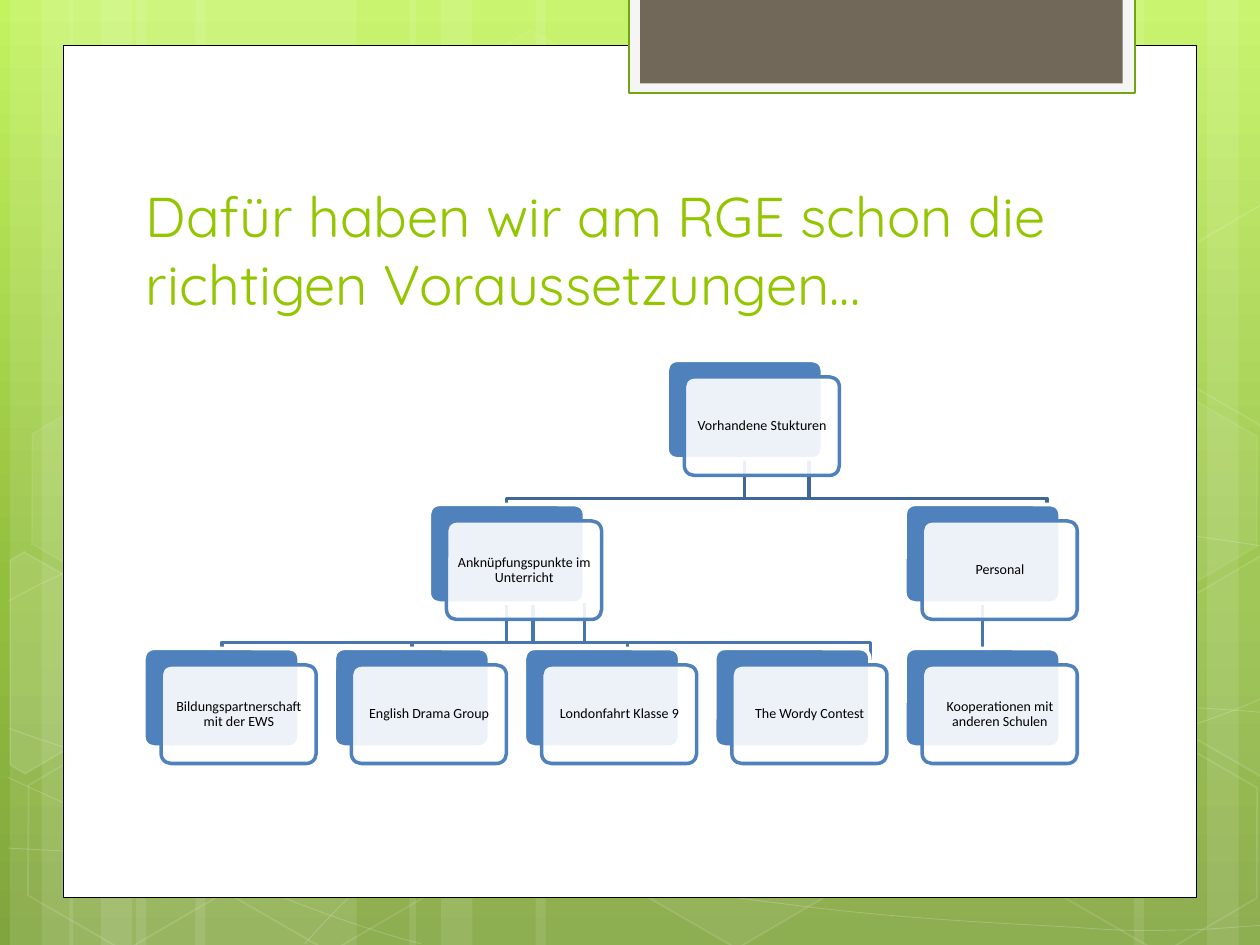
from copy import deepcopy
from typing import NamedTuple, Optional

from lxml import etree
from pptx import Presentation
from pptx.dml.color import RGBColor
from pptx.enum.shapes import MSO_CONNECTOR, MSO_SHAPE
from pptx.enum.text import MSO_ANCHOR, PP_ALIGN
from pptx.oxml.ns import qn
from pptx.util import Pt

RECTANGLE, ROUNDED, HEXAGON = MSO_SHAPE.RECTANGLE, MSO_SHAPE.ROUNDED_RECTANGLE, MSO_SHAPE.HEXAGON
STRAIGHT = MSO_CONNECTOR.STRAIGHT
BOTTOM, MIDDLE = MSO_ANCHOR.BOTTOM, MSO_ANCHOR.MIDDLE
LEFT, CENTER = PP_ALIGN.LEFT, PP_ALIGN.CENTER

WHITE = RGBColor(0xFF, 0xFF, 0xFF)
BLACK = RGBColor(0, 0, 0)
LIME = RGBColor(0x94, 0xC6, 0x00)
GREEN_EDGE = RGBColor(0x74, 0xA5, 0x10)
PALE_GREY = RGBColor(0xF5, 0xF5, 0xF5)
BROWN = RGBColor(0x71, 0x68, 0x5A)
BLUE = RGBColor(0x4F, 0x81, 0xBD)
ROOT_LINE = RGBColor(0x3F, 0x67, 0x97)
BRANCH_LINE = RGBColor(0x48, 0x75, 0xAC)
BACKGROUND = [(0, RGBColor(0xC3, 0xF3, 0x5F)), (0.62, RGBColor(0x93, 0xBF, 0x3F)),
              (1, RGBColor(0x81, 0xA5, 0x3E))]


class Paint(NamedTuple):
    color: RGBColor
    alpha: int = 100
    width: float = 0


class Hexagon(NamedTuple):
    left: float
    top: float
    fill_alpha: int
    line_alpha: int


class Node(NamedTuple):
    text: str
    column: float
    level: int


class Elbow(NamedTuple):
    start: float
    end: float
    level: int


# left, width of the full-height light bands
BANDS = [(77.8, 126), (5.8, 36), (23.8, 59.8), (111.6, 126), (39.6, 36), (57.6, 59.8),
         (527.8, 126), (689.8, 36), (648, 59.8), (306, 221.8), (234, 36), (252, 59.8)]
# start point, then three points for each Bézier segment
CURVES = [
    [(4.3, 484.6), (43.9, 486.7), (82.8, 488.9), (136.8, 488.2), (190.8, 487.4), (257.8, 486),
     (329.8, 478.8), (401.8, 471.6), (504, 457.9), (570.2, 444.2), (635.8, 430.6), (703.4, 409),
     (725, 396.7)],
    [(5, 343.4), (25.9, 331.9), (46.8, 321.1), (87.1, 310.3), (128.2, 299.5), (186.5, 283.7),
     (249.8, 278.6), (313.9, 273.6), (391.7, 272.9), (470.9, 278.6), (550.1, 284.4),
     (681.8, 306.7), (725, 312.5)],
    [(4.3, 444.2), (91.4, 483.8), (177.8, 523.4), (240.5, 539.3)],
    [(5, 416.2), (27.4, 424.1), (50.4, 432), (92.2, 443.5), (133.9, 454.3), (196.6, 472.3),
     (257, 484.6), (316.8, 496.8), (392.4, 509.8), (452.2, 517), (511.9, 524.9), (576, 527.8),
     (614.2, 529.9), (651.6, 532.8), (661.7, 531.4), (680.4, 531.4), (699.1, 530.6),
     (712.1, 529.2), (725, 528.5)],
    [(174.2, 539.3), (187.2, 524.9), (200.2, 510.5), (217.4, 497.5), (234.7, 484.6),
     (259.2, 469.4), (279.4, 460.1), (299.5, 450), (311.8, 445.7), (338.4, 438.5),
     (364.3, 431.3), (412.6, 421.2), (437.8, 416.2), (463.7, 411.1), (467.3, 411.1),
     (489.6, 409.7), (511.9, 407.5), (547.2, 405.4), (571.7, 404.6), (596.9, 403.9),
     (637.9, 404.6), (637.9, 404.6), (654, 404.6), (670, 404.6), (686.2, 404.6),
     (699.1, 405.4), (711.4, 406.1), (717.8, 406.8), (724.3, 407.5), (722.2, 406.8),
     (724.3, 407.5)],
]
HEXAGONS = [Hexagon(240.5, 25.9, 4, 8), Hexagon(357.8, 424.1, 6, 12), Hexagon(7.9, 425.5, 0, 12),
            Hexagon(10.1, 224.6, 7, 8), Hexagon(125.3, 426.2, 0, 12),
            Hexagon(542.2, 326.2, 10, 12), Hexagon(600.5, 427, 0, 12),
            Hexagon(600.5, 226.1, 7, 8)]
LEFT_PIECE = [(5.8, 320.4), (13.7, 315.4), (69.1, 347), (68.4, 410.4), (14.4, 442.1), (5.8, 437)]
RIGHT_PIECE = [(666.7, 349.2), (720.7, 317.5), (726.5, 321.1), (726.5, 441.4), (721.4, 444.2),
               (666.7, 412.6)]
UPPER_RIGHT_PIECE = [(x, y - 200.5) for x, y in RIGHT_PIECE]

FIRST_LEFT, COLUMN_STEP = 82.3, 108.72
FIRST_TOP, LEVEL_STEP = 206, 82.3
BOX_WIDTH, BOX_HEIGHT = 88.6, 56.3
NODES = [
    Node("Vorhandene Stukturen", 2.75, 0),
    Node("Anknüpfungspunkte im Unterricht", 1.5, 1),
    Node("Bildungspartnerschaft mit der EWS", 0, 2),
    Node("English Drama Group", 1, 2),
    Node("Londonfahrt Klasse 9", 2, 2),
    Node("The Wordy Contest", 3, 2),
    Node("Personal", 4, 1),
    Node("Kooperationen mit anderen Schulen", 4, 2),
]
ELBOWS = [Elbow(425.5, 598.3, 0), Elbow(289.4, 497.5, 1), Elbow(289.4, 358.6, 1),
          Elbow(304.6, 235.4, 1), Elbow(334.1, 126.7, 1), Elbow(462.2, 289.4, 0)]
NODE_TEXT = dict(size=Pt(8), name="Calibri")
TITLE_TEXT = dict(size=Pt(32), name="Quicksand")


def set_alpha(container, alpha: int) -> None:
    if alpha < 100:
        color = container.find(f"{qn('a:solidFill')}/{qn('a:srgbClr')}")
        etree.SubElement(color, qn("a:alpha"), val=str(alpha * 1000))


def paint(shape, fill: Optional[Paint], line: Optional[Paint]) -> None:
    shape.shadow.inherit = False
    properties = shape._element.spPr
    if fill:
        shape.fill.solid()
        shape.fill.fore_color.rgb = fill.color
        set_alpha(properties, fill.alpha)
    else:
        shape.fill.background()
    if line:
        shape.line.color.rgb = line.color
        shape.line.width = Pt(line.width)
        set_alpha(properties.find(qn("a:ln")), line.alpha)
    else:
        shape.line.fill.background()


def add_box(slide, kind, bounds, fill: Optional[Paint], line: Optional[Paint] = None):
    shape = slide.shapes.add_shape(kind, *map(Pt, bounds))
    paint(shape, fill, line)
    return shape


def add_outline(slide, points, line: Paint, fill: Optional[Paint] = None, close: bool = False):
    start, *others = [(Pt(x), Pt(y)) for x, y in points]
    builder = slide.shapes.build_freeform(*start)
    builder.add_line_segments(others, close=close)
    shape = builder.convert_to_shape()
    paint(shape, fill, line)
    return shape


def add_curve(slide, points) -> None:
    """Draw an outline, then merge each three straight segments into a Bézier curve."""
    shape = add_outline(slide, points, Paint(WHITE, 20, 0.5))
    outline = next(shape._element.iter(qn("a:moveTo"))).getparent()
    segments = outline.findall(qn("a:lnTo"))
    for index in range(0, len(segments), 3):
        curve = etree.SubElement(outline, qn("a:cubicBezTo"))
        for segment in segments[index:index + 3]:
            curve.append(segment[0])
            outline.remove(segment)


def add_text(slide, text: str, bounds, font: dict, color: RGBColor, paragraph_format: dict,
             frame_format: dict) -> None:
    frame = slide.shapes.add_textbox(*map(Pt, bounds)).text_frame
    paragraph = frame.paragraphs[0]
    run = paragraph.add_run()
    run.text = text
    run.font.color.rgb = color
    formats = [(frame, frame_format), (paragraph, paragraph_format), (run.font, font)]
    for target, values in formats:
        for name, value in values.items():
            setattr(target, name, value)


def add_node(slide, node: Node):
    """Draw the two offset boxes and the label; return the back box."""
    left = FIRST_LEFT + node.column * COLUMN_STEP
    top = FIRST_TOP + node.level * LEVEL_STEP
    size = (BOX_WIDTH, BOX_HEIGHT)
    back = add_box(slide, ROUNDED, (left, top, *size), Paint(BLUE), Paint(WHITE, width=2))
    front = add_box(slide, ROUNDED, (left + 9.8, top + 9.4, *size), Paint(WHITE, 90),
                    Paint(BLUE, width=2))
    for box in (back, front):
        box.adjustments[0] = 0.1
    margins = {f"margin_{side}": Pt(2.4) for side in ("left", "top", "right", "bottom")}
    add_text(slide, node.text, (left + 11.5, top + 11, 85.6, 53.2), NODE_TEXT, BLACK,
             dict(alignment=CENTER, line_spacing=0.9),
             dict(word_wrap=True, vertical_anchor=MIDDLE, **margins))
    return back


def add_background(slide) -> None:
    fill = slide.background.fill
    fill.gradient()
    fill.gradient_angle = 270
    stops = next(slide._element.iter(qn("a:gsLst")))
    stops.insert(1, deepcopy(stops[0]))
    for stop, (position, color) in zip(fill.gradient_stops, BACKGROUND):
        stop.position = position
        stop.color.rgb = color


def add_decoration(slide) -> None:
    for left, width in BANDS:
        add_box(slide, RECTANGLE, (left, 0, width, 540), Paint(WHITE, 10))
    for points in CURVES:
        add_curve(slide, points)
    for hexagon in HEXAGONS:
        fill = Paint(WHITE, hexagon.fill_alpha) if hexagon.fill_alpha else None
        shape = add_box(slide, HEXAGON, (hexagon.left, hexagon.top, 126, 109.4), fill,
                        Paint(WHITE, hexagon.line_alpha, 1))
        shape.adjustments[0], shape.adjustments[1] = 0.285, 1.155
        shape.rotation = 30
    for points, fill in [(LEFT_PIECE, Paint(WHITE, 10)), (RIGHT_PIECE, Paint(WHITE, 4)),
                         (UPPER_RIGHT_PIECE, None)]:
        add_outline(slide, points, Paint(WHITE, 12, 1), fill, close=True)
    add_box(slide, RECTANGLE, (36, 25.9, 648, 486.7), Paint(WHITE), Paint(BLACK, width=0.5))
    add_box(slide, RECTANGLE, (359.3, -1.4, 289.4, 54.7), Paint(PALE_GREY),
            Paint(GREEN_EDGE, width=1.25))
    add_box(slide, RECTANGLE, (365.8, -1.4, 275.8, 49), Paint(BROWN))


def add_chart_tree(slide) -> None:
    connector = slide.shapes.add_connector(STRAIGHT, 0, 0, 0, 0)
    connector.line.color.rgb = BRANCH_LINE
    connector.line.width = Pt(2)
    etree.SubElement(connector._element.spPr, qn("a:effectLst"))
    for start, end, level in ELBOWS:
        top = FIRST_TOP + level * LEVEL_STEP + BOX_HEIGHT
        points = [(start, top), (start, top + 22.6), (end, top + 22.6), (end, top + 32.6)]
        add_outline(slide, points, Paint(BRANCH_LINE if level else ROOT_LINE, width=2))
    boxes = {node.text: add_node(slide, node) for node in NODES}
    connector.begin_connect(boxes["Personal"], 2)
    connector.end_connect(boxes["Kooperationen mit anderen Schulen"], 0)


def main() -> None:
    presentation = Presentation()
    presentation.slide_width, presentation.slide_height = Pt(720), Pt(540)
    slide = presentation.slides.add_slide(presentation.slide_layouts[6])
    add_background(slide)
    add_decoration(slide)
    add_text(slide, "Dafür haben wir am RGE schon die richtigen Voraussetzungen...",
             (76.3, 94.3, 553, 90), TITLE_TEXT, LIME, dict(alignment=LEFT),
             dict(word_wrap=True, vertical_anchor=BOTTOM))
    add_chart_tree(slide)
    presentation.save("out.pptx")


if __name__ == "__main__":
    main()
